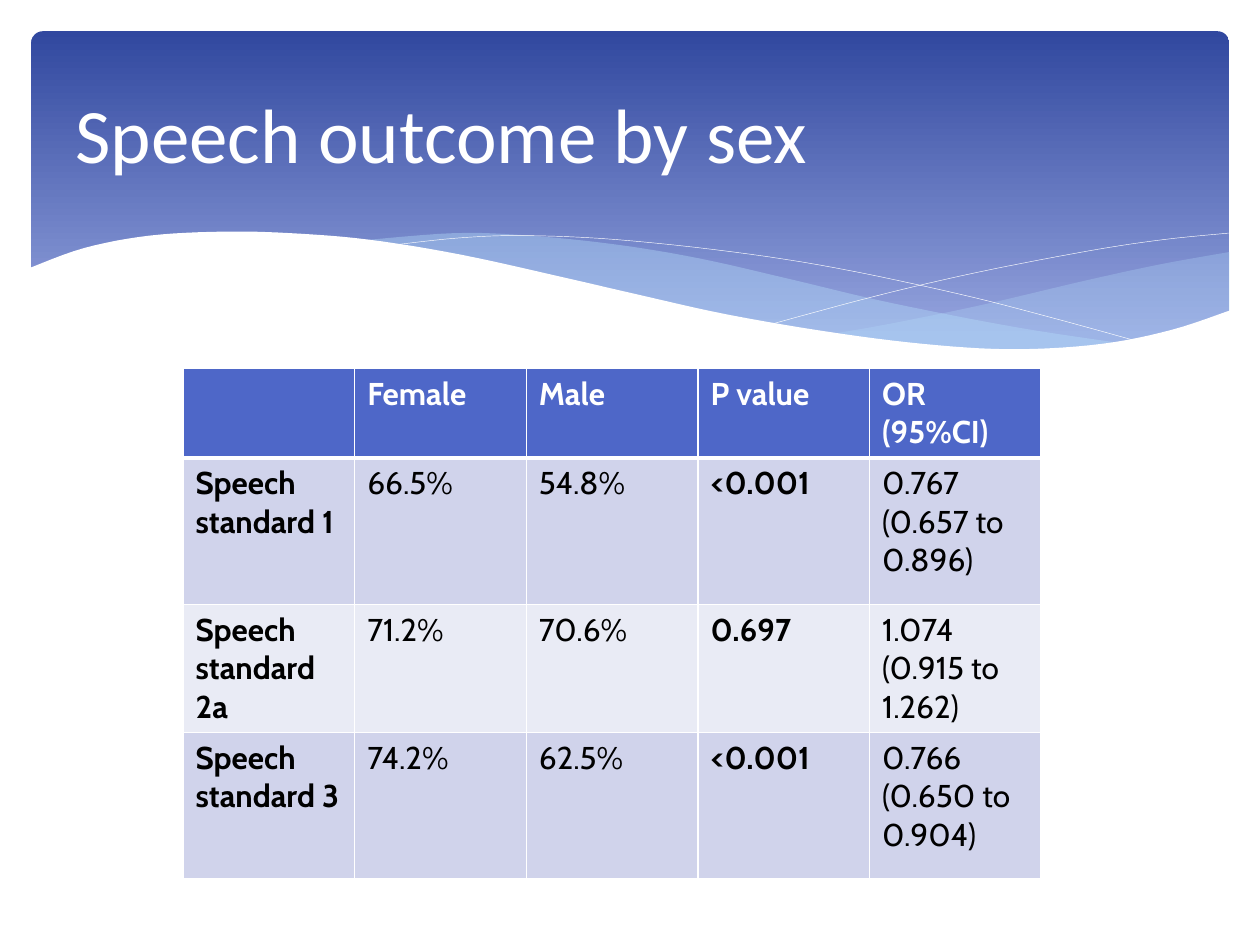
from lxml import etree
from pptx import Presentation
from pptx import util as u
from pptx.dml.color import RGBColor
from pptx.enum import shapes, text
from pptx.oxml.ns import qn

WHITE, BLACK, SKY = "FFFFFF", "000000", "B4DCFA"
HEADER, BAND_DARK, BAND_LIGHT = "4E67C8", "D0D3EB", "E9EBF5"

# Curves in centimetres; an outline is a chain of curves.
RIGHT_WAVE = [
    [(24.79, 5.08), (23.39, 5.33), (21.87, 5.66), (19.79, 6.15), (17.93, 6.53), (16.79, 6.73)],
    [(16.79, 6.73), (18.26, 6.91), (19.53, 7.04), (20.68, 7.06), (21.92, 6.99), (23.39, 6.73),
     (24.79, 6.27)],
]
MIDDLE_WAVE = [
    [(22.68, 6.93), (20.5, 6.6), (17.93, 6.1), (15.98, 5.64), (14.1, 5.21), (12.42, 4.93),
     (10.67, 4.75), (9.17, 4.7), (7.26, 4.85)],
    [(7.26, 4.85), (9.19, 5.16), (11.4, 5.64), (13.46, 6.1), (15.7, 6.55), (17.65, 6.86),
     (19.33, 7.04), (20.78, 7.06), (22.68, 6.93)],
]
FALLING_LINE = [[(7.85, 4.95), (9.22, 4.8), (10.57, 4.75), (12.42, 4.83), (14.78, 5.08),
                 (16.89, 5.41), (19.3, 5.92), (21.11, 6.38), (23.04, 6.91)]]
RISING_LINE = [[(15.57, 6.53), (17.65, 5.97), (19.71, 5.49), (22, 5.05), (23.47, 4.83),
                (24.77, 4.7)]]
WHITE_WAVE = [
    [(24.82, 6.25), (23.62, 6.65), (22.23, 6.93), (20.55, 7.04), (18.9, 6.96), (16.97, 6.73),
     (14.71, 6.35), (12.78, 5.92), (11.35, 5.59), (9.27, 5.13), (7.42, 4.83), (5.84, 4.7),
     (4.5, 4.67), (3.02, 4.75), (1.7, 5), (0.58, 5.41)],
    [(0.58, 8.36), (24.82, 8.36)],
]

ROWS = [
    ("", "Female", "Male", "P value", "OR (95%CI)"),
    ("Speech standard 1", "66.5%", "54.8%", "<0.001", "0.767 (0.657 to 0.896)"),
    ("Speech standard 2a", "71.2%", "70.6%", "0.697", "1.074 (0.915 to 1.262)"),
    ("Speech standard 3", "74.2%", "62.5%", "<0.001", "0.766 (0.650 to 0.904)"),
]
ROW_HEIGHTS = [1.6, 2.95, 2.31, 2.95]
COLUMN_WIDTH = 3.46
BOLD_COLUMNS = (0, 3)


def rgb(value):
    return RGBColor.from_string(value)


def smooth(points, steps=6):
    """Return points on a Catmull-Rom curve through the given points."""
    if len(points) < 3:
        return points
    padded = [points[0], *points, points[-1]]
    curve = [points[0]]
    for a, b, c, d in zip(padded, padded[1:], padded[2:], padded[3:]):
        for step in range(1, steps + 1):
            t = step / steps
            curve.append(tuple(
                0.5 * (2 * q + (r - p) * t + (2 * p - 5 * q + 4 * r - s) * t ** 2
                       + (3 * q - p - 3 * r + s) * t ** 3)
                for p, q, r, s in zip(a, b, c, d)))
    return curve


class Deck:
    title_font, body_font = "Calibri", "Cabin"
    title_size, body_size = 44, 18

    def __init__(self, prs):
        self.s = prs.slides.add_slide(prs.slide_layouts[5])

    def run(self, p, words, font, size, color, bold=False):
        r = p.add_run()
        r.text = words
        r.font.name, r.font.size, r.font.bold = font, u.Pt(size), bold
        r.font.color.rgb = rgb(color)

    def banner(self, left, top, width, height, top_color, bottom_color):
        sp = self.s.shapes.add_shape(shapes.MSO_SHAPE.ROUNDED_RECTANGLE, u.Cm(left), u.Cm(top),
                                     u.Cm(width), u.Cm(height))
        sp.adjustments[0] = 0.034
        sp.shadow.inherit = False
        sp.line.fill.background()
        sp.fill.gradient()
        sp.fill.gradient_angle = 270
        for stop, color, position in zip(sp.fill.gradient_stops, (top_color, bottom_color),
                                         (0, 0.9)):
            stop.color.rgb, stop.position = rgb(color), position

    def outline(self, curves, closed):
        points = [(u.Cm(x), u.Cm(y)) for curve in curves for x, y in smooth(curve)]
        builder = self.s.shapes.build_freeform(*points[0])
        builder.add_line_segments(points[1:], close=closed)
        sp = builder.convert_to_shape()
        sp.shadow.inherit = False
        return sp

    def wave(self, curves, color, opacity=100):
        sp = self.outline(curves, True)
        sp.line.fill.background()
        sp.fill.solid()
        sp.fill.fore_color.rgb = rgb(color)
        if opacity < 100:
            tint = sp._element.spPr.find(".//" + qn("a:srgbClr"))
            etree.SubElement(tint, qn("a:alpha"), val=str(opacity * 1000))

    def hairline(self, curves, color):
        sp = self.outline(curves, False)
        sp.fill.background()
        sp.line.color.rgb = rgb(color)
        sp.line.width = u.Pt(0.25)

    def title(self, words, left, top, width, height):
        sp = self.s.shapes.title
        sp.left, sp.top, sp.width, sp.height = map(u.Cm, (left, top, width, height))
        sp._element.getparent().append(sp._element)  # in front of the banner
        tf = sp.text_frame
        tf.vertical_anchor = text.MSO_ANCHOR.MIDDLE
        p = tf.paragraphs[0]
        p.alignment = text.PP_ALIGN.LEFT
        self.run(p, words, self.title_font, self.title_size, WHITE)

    def borders(self, cell, is_header, below_header):
        tc_pr = cell._tc.get_or_add_tcPr()
        for side in "LRTB":
            thick = is_header and side == "B" or below_header and side == "T"
            ln = etree.SubElement(tc_pr, qn("a:ln" + side), w=str(u.Pt(3 if thick else 1)))
            fill = etree.SubElement(ln, qn("a:solidFill"))
            etree.SubElement(fill, qn("a:srgbClr"), val=WHITE)

    def table(self, rows, left, top):
        columns = len(rows[0])
        tbl = self.s.shapes.add_table(len(rows), columns, u.Cm(left), u.Cm(top),
                                      u.Cm(columns * COLUMN_WIDTH),
                                      u.Cm(sum(ROW_HEIGHTS))).table
        for column in tbl.columns:
            column.width = u.Cm(COLUMN_WIDTH)
        for i, row in enumerate(rows):
            tbl.rows[i].height = u.Cm(ROW_HEIGHTS[i])
            band = HEADER if i == 0 else BAND_DARK if i % 2 else BAND_LIGHT
            for j, words in enumerate(row):
                cell = tbl.cell(i, j)
                self.borders(cell, i == 0, i == 1)
                cell.fill.solid()
                cell.fill.fore_color.rgb = rgb(band)
                if words:
                    self.run(cell.text_frame.paragraphs[0], words, self.body_font,
                             self.body_size, BLACK if i else WHITE,
                             i == 0 or j in BOLD_COLUMNS)


def main():
    prs = Presentation()
    prs.slide_width, prs.slide_height = u.Cm(25.4), u.Cm(19.05)
    deck = Deck(prs)
    deck.banner(0.63, 0.63, 24.15, 6.86, "31489F", "95A4DE")
    deck.wave(RIGHT_WAVE, SKY, 29)
    deck.wave(MIDDLE_WAVE, SKY, 40)
    deck.hairline(FALLING_LINE, WHITE)
    deck.hairline(RISING_LINE, WHITE)
    deck.wave(WHITE_WAVE, WHITE)
    deck.title("Speech outcome by sex", 1.27, 0.95, 22.86, 3.47)
    deck.table(ROWS, 3.69, 7.43)
    prs.save("out.pptx")


if __name__ == "__main__":
    main()
